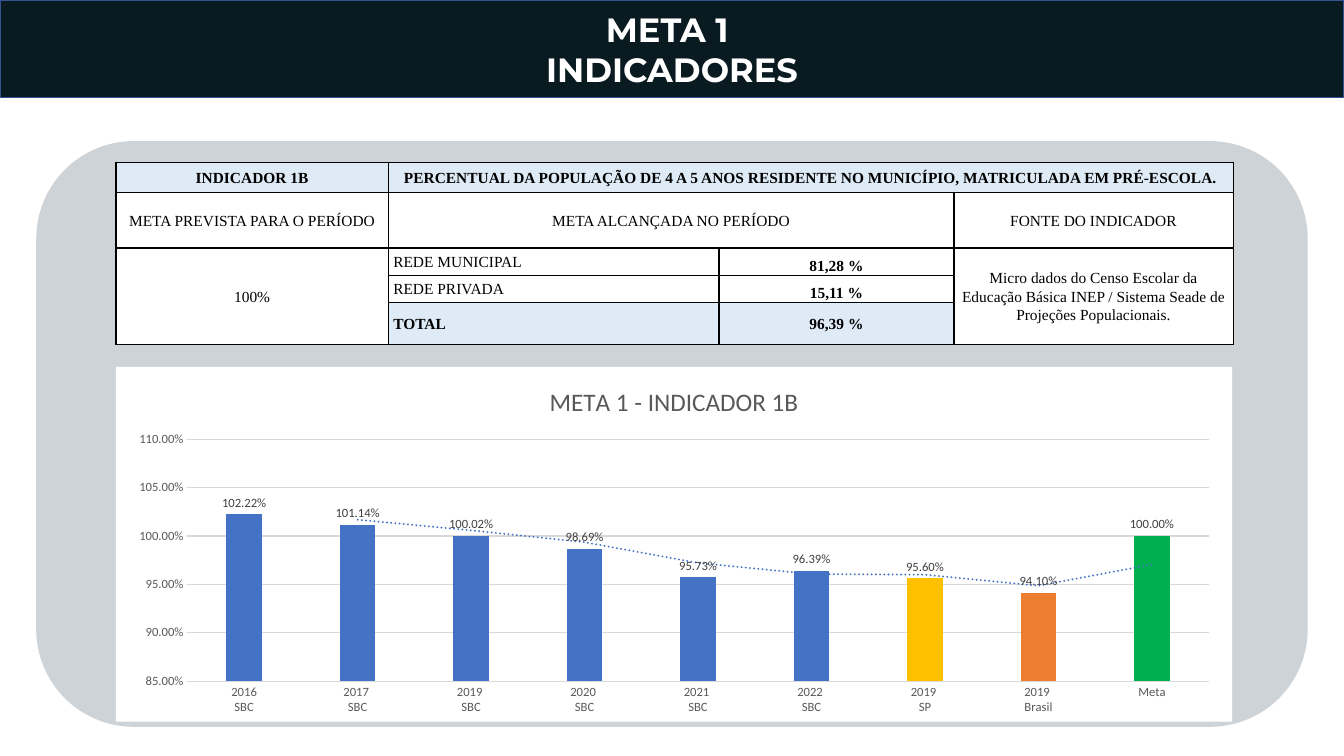
from dataclasses import dataclass

from lxml import etree
from pptx import Presentation
from pptx.chart.data import CategoryChartData
from pptx.dml.color import RGBColor
from pptx.enum.chart import XL_CHART_TYPE as ChartType
from pptx.enum.chart import XL_LABEL_POSITION as LabelPosition
from pptx.enum.chart import XL_TICK_MARK as TickMark
from pptx.enum.shapes import MSO_SHAPE as Preset
from pptx.enum.text import MSO_ANCHOR as Anchor
from pptx.enum.text import MSO_AUTO_SIZE as AutoSize
from pptx.enum.text import PP_ALIGN as Align
from pptx.oxml import parse_xml
from pptx.oxml.ns import nsdecls, qn
from pptx.util import Inches, Pt

WHITE = RGBColor(0xFF, 0xFF, 0xFF)
BLACK = RGBColor(0x00, 0x00, 0x00)
NAVY = RGBColor(0x0A, 0x1A, 0x21)
BANNER_EDGE = RGBColor(0x32, 0x54, 0x91)
PANEL_GREY = RGBColor(0xCE, 0xD3, 0xD8)
PALE_BLUE = RGBColor(0xDE, 0xEB, 0xF7)
AXIS_TEXT = RGBColor(0x59, 0x59, 0x59)
LABEL_TEXT = RGBColor(0x40, 0x40, 0x40)
GRID_GREY = RGBColor(0xD9, 0xD9, 0xD9)
BLUE = RGBColor(0x44, 0x72, 0xC4)
YELLOW = RGBColor(0xFF, 0xC0, 0x00)
ORANGE = RGBColor(0xED, 0x7D, 0x31)
GREEN = RGBColor(0x00, 0xB0, 0x50)

SLIDE_WIDTH, SLIDE_HEIGHT = Inches(13.33), Inches(7.5)


def across(percent: float) -> int:
    """Share of the slide's width."""
    return round(SLIDE_WIDTH * percent / 100)


def down(percent: float) -> int:
    """Share of the slide's height."""
    return round(SLIDE_HEIGHT * percent / 100)


@dataclass
class Area:
    left: float
    top: float
    width: float
    height: float

    def place(self) -> tuple[int, int, int, int]:
        return across(self.left), down(self.top), across(self.width), down(self.height)


@dataclass
class TableCell:
    row: int
    column: int
    text: str
    rows: int = 1
    columns: int = 1
    bold: bool = False
    fill: RGBColor = WHITE
    align: Align = Align.CENTER
    anchor: Anchor = Anchor.MIDDLE


@dataclass
class Bar:
    label: str
    value: float
    color: RGBColor = BLUE


BANNER = Area(0, 0, 100, 12.93)
PANEL = Area(2.7, 18.67, 94.6, 77.47)
TABLE = Area(8.63, 21.47, 83.13, 24.13)
CHART = Area(8.63, 48.53, 83.05, 46.93)
COLUMN_WIDTHS = (20.26, 24.61, 17.48, 20.78)
ROW_HEIGHTS = (4, 7.33, 3.6, 3.6, 5.6)

CELLS = [
    TableCell(0, 0, "INDICADOR 1B", bold=True, fill=PALE_BLUE),
    TableCell(0, 1, "PERCENTUAL DA POPULAÇÃO DE 4 A 5 ANOS RESIDENTE NO MUNICÍPIO, "
              "MATRICULADA EM PRÉ-ESCOLA.", columns=3, bold=True, fill=PALE_BLUE),
    TableCell(1, 0, "META PREVISTA PARA O PERÍODO"),
    TableCell(1, 1, "META ALCANÇADA NO PERÍODO", columns=2),
    TableCell(1, 3, "FONTE DO INDICADOR"),
    TableCell(2, 0, "100%", rows=3),
    TableCell(2, 1, "REDE MUNICIPAL", align=Align.LEFT),
    TableCell(2, 2, "81,28 %", bold=True, anchor=Anchor.BOTTOM),
    TableCell(2, 3, "Micro dados do Censo Escolar da Educação Básica INEP / "
              "Sistema Seade de Projeções Populacionais.", rows=3),
    TableCell(3, 1, "REDE PRIVADA", align=Align.LEFT),
    TableCell(3, 2, "15,11 %", bold=True, anchor=Anchor.BOTTOM),
    TableCell(4, 1, "TOTAL", bold=True, fill=PALE_BLUE, align=Align.LEFT),
    TableCell(4, 2, "96,39 %", bold=True, fill=PALE_BLUE),
]

BARS = [
    Bar("2016\nSBC", 1.0222), Bar("2017 \nSBC", 1.0114), Bar("2019 \nSBC", 1.0002),
    Bar("2020 \nSBC", 0.9869), Bar("2021 \nSBC", 0.9573), Bar("2022 \nSBC", 0.9639),
    Bar("2019 \nSP", 0.956, YELLOW), Bar("2019 \nBrasil", 0.941, ORANGE),
    Bar("Meta", 1, GREEN),
]


def style_font(font, name: str, size: float, color: RGBColor, bold: bool = False) -> None:
    font.name, font.size, font.bold = name, Pt(size), bold
    font.color.rgb = color


def paint(item, color: RGBColor) -> None:
    item.fill.solid()
    item.fill.fore_color.rgb = color


def add_banner(page) -> None:
    banner = page.shapes.title
    banner.left, banner.top, banner.width, banner.height = BANNER.place()
    paint(banner, NAVY)
    banner.line.color.rgb, banner.line.width = BANNER_EDGE, Pt(1)
    frame = banner.text_frame
    frame.auto_size, frame.vertical_anchor = AutoSize.NONE, Anchor.MIDDLE
    for index, text in enumerate(("META 1 ", "INDICADORES")):
        para = frame.add_paragraph() if index else frame.paragraphs[0]
        para.alignment = Align.CENTER
        span = para.add_run()
        span.text = text
        style_font(span.font, "Montserrat", 24, WHITE, bold=True)


def add_panel(page) -> None:
    panel = page.shapes.add_shape(Preset.ROUNDED_RECTANGLE, *PANEL.place())
    panel.shadow.inherit = False
    paint(panel, PANEL_GREY)
    panel.line.fill.background()


def add_borders(cell) -> None:
    properties = cell._tc.get_or_add_tcPr()
    for side in ("lnL", "lnR", "lnT", "lnB"):
        properties.append(parse_xml(
            f'<a:{side} {nsdecls("a")} w="{Pt(1)}"><a:solidFill>'
            f'<a:srgbClr val="{BLACK}"/></a:solidFill></a:{side}>'))


def add_indicator_table(page) -> None:
    table = page.shapes.add_table(len(ROW_HEIGHTS), len(COLUMN_WIDTHS), *TABLE.place()).table
    table.first_row = table.horz_banding = False
    for column, width in zip(table.columns, COLUMN_WIDTHS):
        column.width = across(width)
    for row, height in zip(table.rows, ROW_HEIGHTS):
        row.height = down(height)
    for cell in table.iter_cells():
        add_borders(cell)
        paint(cell, WHITE)
        cell.margin_left = cell.margin_right = Inches(0.05)
        cell.margin_top = cell.margin_bottom = 0
    for item in CELLS:
        cell = table.cell(item.row, item.column)
        if item.rows * item.columns > 1:
            cell.merge(table.cell(item.row + item.rows - 1, item.column + item.columns - 1))
        paint(cell, item.fill)
        cell.vertical_anchor = item.anchor
        para = cell.text_frame.paragraphs[0]
        para.alignment, para.line_spacing, para.space_after = item.align, 1.07, Pt(8)
        span = para.add_run()
        span.text = item.text
        style_font(span.font, "Times New Roman", 11, BLACK, item.bold)


def add_chart_xml(chart, series) -> None:
    # White background, moving average and place of the plot
    space = chart._chartSpace
    space.find(qn("c:chart")).addnext(parse_xml(
        f'<c:spPr {nsdecls("c", "a")}><a:solidFill><a:srgbClr val="{WHITE}"/></a:solidFill>'
        '<a:ln><a:noFill/></a:ln></c:spPr>'))
    series._element.find(qn("c:cat")).addprevious(parse_xml(
        f'<c:trendline {nsdecls("c", "a")}><c:spPr><a:ln w="{Pt(1.5)}" cap="rnd"><a:solidFill>'
        f'<a:srgbClr val="{BLUE}"/></a:solidFill><a:prstDash val="sysDot"/></a:ln></c:spPr>'
        '<c:trendlineType val="movingAvg"/><c:period val="2"/>'
        '<c:dispRSqr val="0"/><c:dispEq val="0"/></c:trendline>'))
    plot_area = space.find(".//" + qn("c:plotArea"))
    for old in plot_area.findall(qn("c:layout")):
        plot_area.remove(old)
    layout = parse_xml(f'<c:layout {nsdecls("c")}><c:manualLayout/></c:layout>')
    settings = {"layoutTarget": "inner", "xMode": "edge", "yMode": "edge",
                "x": "0.064", "y": "0.204", "w": "0.915", "h": "0.682"}
    for name, value in settings.items():
        etree.SubElement(layout[0], qn(f"c:{name}")).set("val", value)
    plot_area.insert(0, layout)


def add_indicator_chart(page) -> None:
    data = CategoryChartData(number_format="0.00%")
    data.categories = [bar.label for bar in BARS]
    data.add_series("Series 1", [bar.value for bar in BARS])
    chart = page.shapes.add_chart(ChartType.COLUMN_CLUSTERED, *CHART.place(), data).chart
    style_font(chart.font, "Calibri", 10, BLACK)
    chart.has_legend = False
    chart.has_title = True
    span = chart.chart_title.text_frame.paragraphs[0].add_run()
    span.text = "META 1 - INDICADOR 1B"
    style_font(span.font, "Calibri", 18, AXIS_TEXT)
    chart.chart_title.include_in_layout = False

    # Axes
    years, shares = chart.category_axis, chart.value_axis
    for axis in (years, shares):
        axis.major_tick_mark = axis.minor_tick_mark = TickMark.NONE
        style_font(axis.tick_labels.font, "Calibri", 9, AXIS_TEXT)
    shares.minimum_scale, shares.maximum_scale, shares.major_unit = 0.85, 1.1, 0.05
    shares.tick_labels.number_format = "0.00%"
    shares.tick_labels.number_format_is_linked = False
    shares.format.line.fill.background()
    for line in (years.format.line, shares.major_gridlines.format.line):
        line.color.rgb, line.width = GRID_GREY, Pt(0.75)

    # Bars and their labels
    plot = chart.plots[0]
    plot.gap_width, plot.overlap, plot.vary_by_categories = 219, -27, False
    series = plot.series[0]
    paint(series.format, BLUE)
    for index, bar in enumerate(BARS):
        if bar.color != BLUE:
            paint(series.points[index].format, bar.color)
    labels = series.data_labels
    labels.show_value, labels.position = True, LabelPosition.OUTSIDE_END
    labels.number_format, labels.number_format_is_linked = "0.00%", False
    style_font(labels.font, "Calibri", 9, LABEL_TEXT)
    add_chart_xml(chart, series)


def main() -> None:
    deck = Presentation()
    deck.slide_width, deck.slide_height = SLIDE_WIDTH, SLIDE_HEIGHT
    page = deck.slides.add_slide(deck.slide_layouts.get_by_name("Title Only"))
    add_banner(page)
    add_panel(page)
    add_indicator_table(page)
    add_indicator_chart(page)
    deck.save("out.pptx")


if __name__ == "__main__":
    main()
